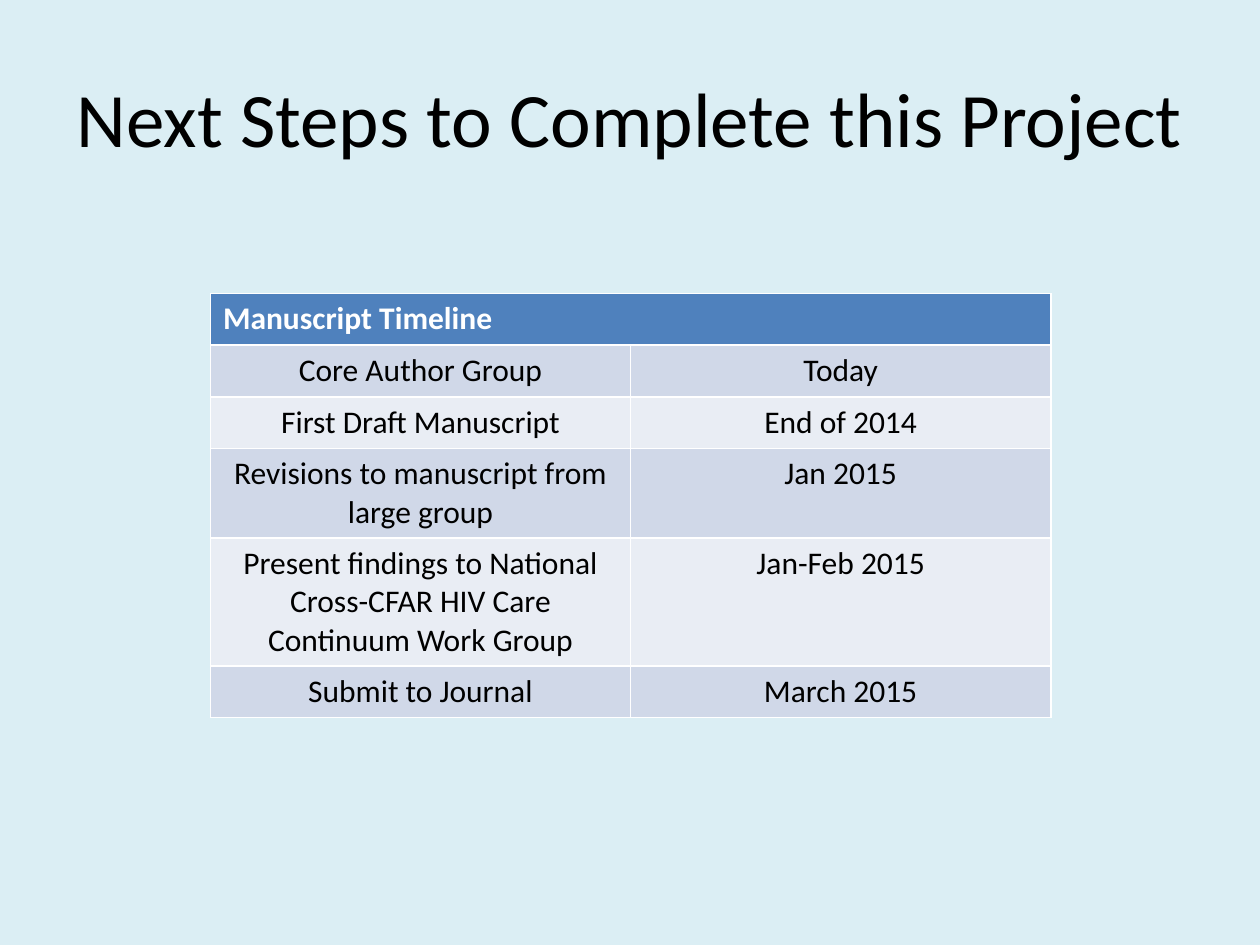
from pptx import Presentation
from pptx.dml.color import RGBColor
from pptx.enum.text import MSO_ANCHOR, PP_ALIGN
from pptx.util import Inches, Pt

LEFT, CENTER = PP_ALIGN.LEFT, PP_ALIGN.CENTER
MIDDLE = MSO_ANCHOR.MIDDLE
TITLE_ONLY = 5
FONT = "Calibri"
BACKGROUND, BLACK, WHITE = "DBEEF4", "000000", "FFFFFF"
HEADER, BANDS = "4F81BD", ("D0D8E8", "E9EDF4")
ROW_HEIGHT = 0.41

STEPS = [
    ("Core Author Group", "Today"),
    ("First Draft Manuscript", "End of 2014"),
    ("Revisions to manuscript from large group", "Jan 2015"),
    ("Present findings to National Cross-CFAR HIV Care Continuum Work Group",
     "Jan-Feb 2015"),
    ("Submit to Journal", "March 2015"),
]


def rgb(color):
    return RGBColor.from_string(color)


def paint(fill, color):
    fill.solid()
    fill.fore_color.rgb = rgb(color)


def write(tf, text, size, color, align, bold=False):
    p = tf.paragraphs[0]
    p.alignment = align
    r = p.add_run()
    r.text = text
    r.font.name = FONT
    r.font.size = Pt(size)
    r.font.bold = bold
    r.font.color.rgb = rgb(color)


def add_title(s, text, left, top, width, height):
    sp = s.shapes.title
    sp.left, sp.top = Inches(left), Inches(top)
    sp.width, sp.height = Inches(width), Inches(height)
    tf = sp.text_frame
    tf.word_wrap = True
    tf.vertical_anchor = MIDDLE
    write(tf, text, 44, BLACK, CENTER)


def add_timeline(s, heading, steps, left, top, width):
    count = len(steps) + 1
    table = s.shapes.add_table(
        count, 2, Inches(left), Inches(top),
        Inches(width), Inches(ROW_HEIGHT * count)).table
    header = table.cell(0, 0)
    header.merge(table.cell(0, 1))
    paint(header.fill, HEADER)
    write(header.text_frame, heading, 18, WHITE, LEFT, bold=True)
    for row, step in enumerate(steps, 1):
        for col, text in enumerate(step):
            cell = table.cell(row, col)
            paint(cell.fill, BANDS[(row - 1) % 2])
            write(cell.text_frame, text, 18, BLACK, CENTER)


def main():
    prs = Presentation()
    prs.slide_width, prs.slide_height = Inches(10), Inches(7.5)
    s = prs.slides.add_slide(prs.slide_layouts[TITLE_ONLY])
    paint(s.background.fill, BACKGROUND)
    add_title(s, "Next Steps to Complete this Project", 0.5, 0.3, 9, 1.25)
    add_timeline(s, "Manuscript Timeline", STEPS, 1.67, 2.33, 6.67)
    prs.save("out.pptx")


if __name__ == "__main__":
    main()
